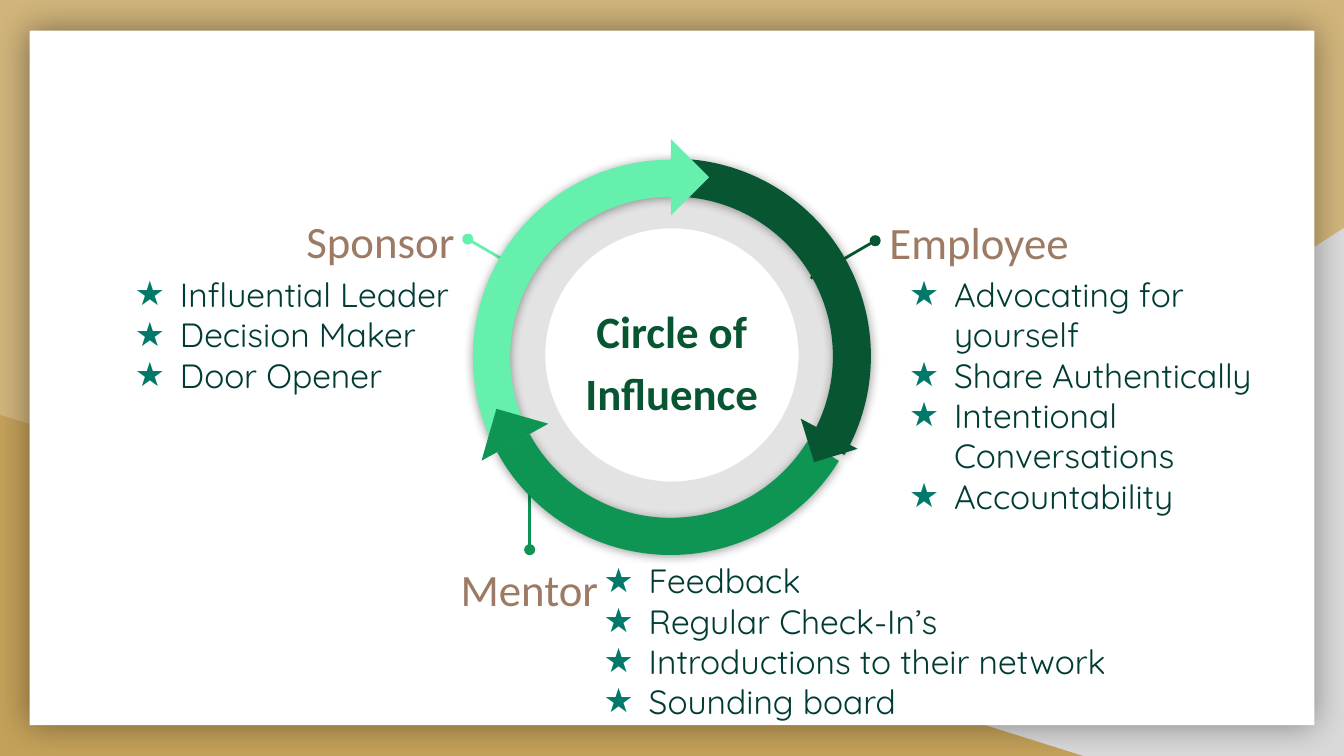
from dataclasses import dataclass

from lxml import etree
from pptx import Presentation
from pptx import util as u
from pptx.dml.color import RGBColor
from pptx.enum import shapes, text
from pptx.oxml import ns

SHAPE = shapes.MSO_SHAPE
ALIGN = text.PP_ALIGN
ANCHOR = text.MSO_ANCHOR


@dataclass(frozen=True)
class Theme:
    backdrop: str = "D0B47B"
    gold: str = "C4A15A"
    grey: str = "D9D9D9"
    card: str = "FFFFFF"
    band: str = "E3E3E3"
    dark: str = "085631"
    green: str = "0E9453"
    mint: str = "65F0AD"
    heading: str = "9D7A63"
    body: str = "003C35"
    star: str = "00796B"
    heading_font: str = "Calibri"
    body_font: str = "Quicksand"
    heading_size: int = 24
    body_size: int = 18


@dataclass(frozen=True)
class Box:
    """An area in centimetres."""
    left: float
    top: float
    width: float
    height: float

    def inner(self, dx, dy, width, height):
        return Box(self.left + dx, self.top + dy, width, height)

    def lengths(self):
        return [u.Cm(v) for v in (self.left, self.top, self.width, self.height)]


THEME = Theme()


def add_xml(parent, tag, **attributes):
    return etree.SubElement(parent, ns.qn(tag), attributes)


def add_shadow(shape, blur, distance=0):
    effects = shape.element.spPr.find(ns.qn("a:effectLst"))
    outer = add_xml(effects, "a:outerShdw", blurRad=str(u.Pt(blur)),
                    dist=str(u.Pt(distance)), dir="5400000", rotWithShape="0")
    add_xml(add_xml(outer, "a:srgbClr", val="000000"), "a:alpha", val="40000")


def add_filled(slide, kind, box, color, rotation=0, flip=False, adjust=()):
    shape = slide.shapes.add_shape(kind, *box.lengths())
    shape.shadow.inherit = False
    shape.fill.solid()
    shape.fill.fore_color.rgb = RGBColor.from_string(color)
    shape.line.fill.background()
    shape.rotation = rotation
    if flip:
        shape.element.spPr.find(ns.qn("a:xfrm")).set("flipH", "1")
    for index, value in enumerate(adjust):
        shape.adjustments[index] = value
    return shape


def add_star(paragraph):
    properties = paragraph._p.get_or_add_pPr()
    properties.set("marL", str(u.Cm(1.27)))
    properties.set("indent", str(u.Cm(-0.85)))
    add_xml(add_xml(properties, "a:buClr"), "a:srgbClr", val=THEME.star)
    add_xml(properties, "a:buChar", char="★")


def write(holder, lines, *, font=THEME.heading_font, size=THEME.heading_size,
          color=THEME.heading, bold=False, align=ALIGN.LEFT, spacing=1.15,
          anchor=ANCHOR.TOP, starred=False):
    frame = holder.text_frame
    frame.word_wrap = True
    frame.auto_size = text.MSO_AUTO_SIZE.NONE
    frame.vertical_anchor = anchor
    frame.margin_left = frame.margin_right = u.Cm(0.25)
    frame.margin_top = frame.margin_bottom = u.Cm(0.25)
    frame.text = "\n".join(lines)
    for paragraph in frame.paragraphs:
        paragraph.alignment = align
        paragraph.line_spacing = spacing
        paragraph.space_before = paragraph.space_after = u.Pt(0)
        if starred:
            add_star(paragraph)
        style = paragraph.runs[0].font
        style.name, style.size, style.bold = font, u.Pt(size), bold
        style.color.rgb = RGBColor.from_string(color)


def place(slide, placeholder, box):
    """Move a placeholder to its box, in front of everything drawn so far."""
    (placeholder.left, placeholder.top,
     placeholder.width, placeholder.height) = box.lengths()
    slide.shapes.element.append(placeholder.element)


def draw_backdrop(slide, box):
    slide.background.fill.solid()
    slide.background.fill.fore_color.rgb = RGBColor.from_string(THEME.backdrop)
    add_filled(slide, SHAPE.RIGHT_TRIANGLE, box.inner(9.96, 4.31, 15.44, 9.98),
               THEME.grey, flip=True)
    add_filled(slide, SHAPE.RIGHT_TRIANGLE, box.inner(0, 7.84, 20.47, 6.45), THEME.gold)
    card = add_filled(slide, SHAPE.RECTANGLE, box.inner(0.56, 0.58, 24.28, 13.13), THEME.card)
    add_shadow(card, 18)


def draw_center(slide, box):
    add_filled(slide, SHAPE.DONUT, box, THEME.band, adjust=[0.161])
    title = slide.shapes.title
    place(slide, title, box.inner(1.52, 2.46, 4.01, 2.24))
    write(title, ["Circle of Influence"], color=THEME.dark, bold=True,
          align=ALIGN.CENTER, anchor=ANCHOR.MIDDLE)


def draw_role(slide, box, name, traits, placeholder, color, align,
              heading, traits_area, pin):
    """Draw a heading, its starred list and the pin that leads to the ring."""
    x1, y1, x2, y2 = pin
    line = slide.shapes.add_connector(
        shapes.MSO_CONNECTOR.STRAIGHT,
        u.Cm(box.left + x1), u.Cm(box.top + y1), u.Cm(box.left + x2), u.Cm(box.top + y2))
    line.line.width = u.Pt(1.5)
    line.line.color.rgb = RGBColor.from_string(color)
    outline = line.element.spPr.find(ns.qn("a:ln"))
    add_xml(outline, "a:headEnd", type="oval")
    add_xml(line.element.spPr, "a:effectLst")

    label = slide.shapes.add_textbox(*box.inner(*heading).lengths())
    write(label, [name], align=align)
    place(slide, placeholder, box.inner(*traits_area))
    write(placeholder, traits, font=THEME.body_font, size=THEME.body_size,
          color=THEME.body, spacing=1.0, starred=True)


def draw_arrows(slide, box):
    """Draw three arcs of a third of a turn each, with their arrowheads."""
    def arc(dx, dy, color, rotation, start, end, thickness, flip=True):
        # block arc angles are stored in 60000ths of a degree
        shape = add_filled(slide, SHAPE.BLOCK_ARC, box.inner(dx, dy, box.width, box.height),
                           color, rotation, flip, [start * 0.6, end * 0.6, thickness])
        add_shadow(shape, 5.6, 0.8)

    def head(dx, dy, side, color, rotation):
        add_filled(slide, SHAPE.RIGHT_TRIANGLE, box.inner(dx, dy, side, side), color, rotation)

    arc(0.05, -0.02, THEME.dark, 30, 240.24, 0.01, 0.096, flip=False)
    arc(0, 0, THEME.mint, 330, 239.14, 357.88, 0.094)
    head(3.23, -0.18, 1.02, THEME.mint, 225)
    arc(0, 0, THEME.green, 210, 238.6, 358.38, 0.094)
    head(6.3, 4.75, 0.86, THEME.dark, 342.9)
    head(0.28, 4.83, 1.02, THEME.green, 106)


def main():
    deck = Presentation()
    deck.slide_width, deck.slide_height = u.Cm(25.4), u.Cm(14.29)
    slide = deck.slides.add_slide(deck.slide_layouts.get_by_name("Comparison"))
    _, employee, mentor, sponsor, spare = slide.placeholders
    spare.element.getparent().remove(spare.element)

    draw_backdrop(slide, Box(0, 0, 25.4, 14.29))
    draw_center(slide, Box(9.17, 3.18, 7.06, 7.06))
    draw_role(slide, Box(16.51, 3.66, 7.52, 6.4), "Employee",
              ["Advocating for yourself", "Share Authentically",
               "Intentional Conversations", "Accountability"],
              employee, THEME.dark, ALIGN.LEFT, heading=(0.05, 0, 4.17, 1.85),
              traits_area=(0, 1.27, 7.52, 5.13), pin=(0.03, 0.89, -1.19, 1.6))
    draw_role(slide, Box(7.92, 10.21, 13.95, 3.71), "Mentor",
              ["Feedback", "Regular Check-In’s",
               "Introductions to their network", "Sounding board"],
              mentor, THEME.green, ALIGN.CENTER, heading=(0, 0, 4.17, 2.08),
              traits_area=(2.82, 0.13, 11.13, 3.58), pin=(2.09, 0.18, 2.09, -1.09))
    draw_role(slide, Box(1.88, 3.63, 6.96, 4.12), "Sponsor",
              ["Influential Leader", "Decision Maker", "Door Opener"],
              sponsor, THEME.mint, ALIGN.RIGHT, heading=(1.17, 0, 5.79, 1.85),
              traits_area=(0, 1.3, 6.86, 2.82), pin=(6.96, 0.89, 8.15, 1.58))
    draw_arrows(slide, Box(8.94, 3.02, 7.47, 7.47))
    deck.save("out.pptx")


if __name__ == "__main__":
    main()
